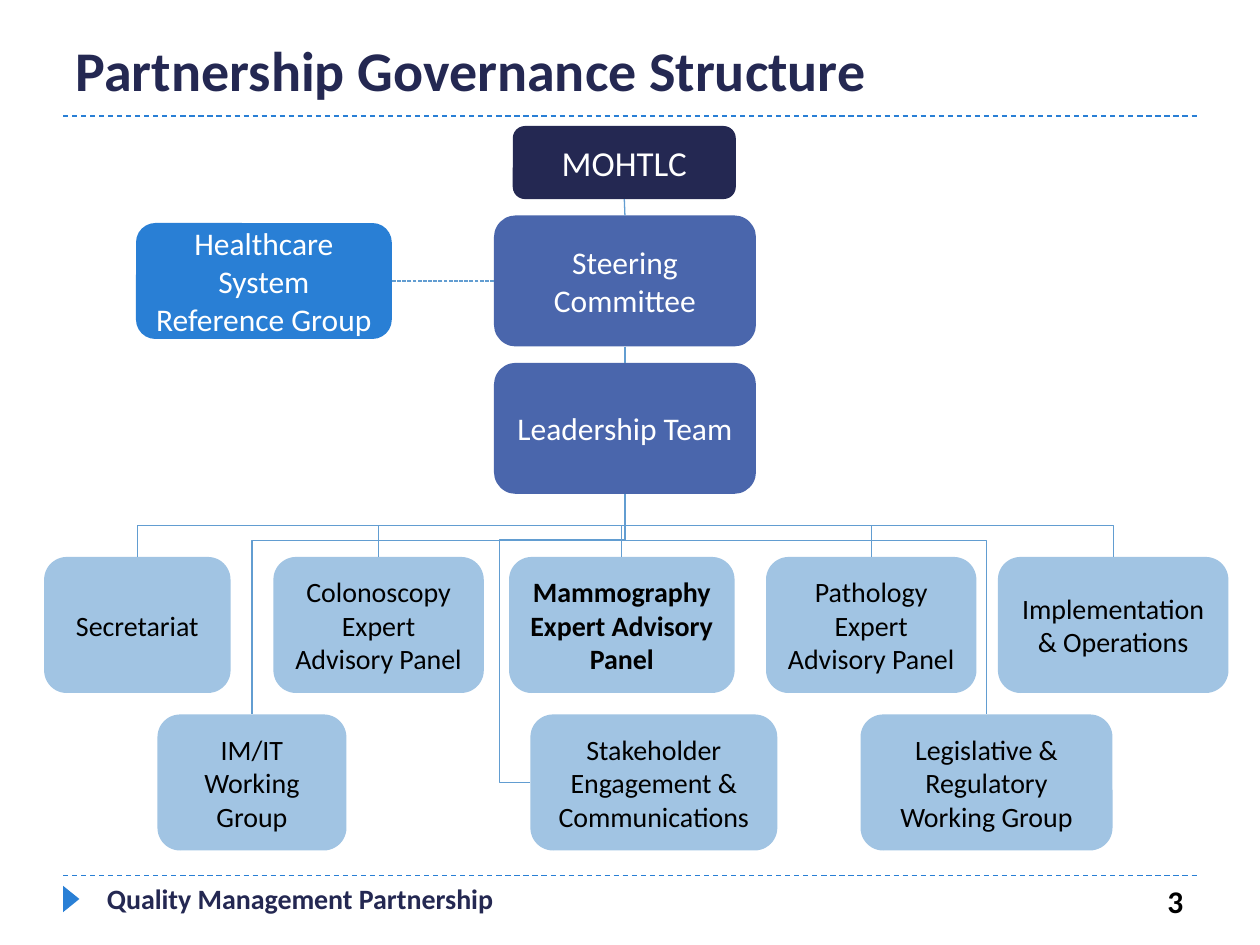
"""Build the partnership governance structure slide."""
from lxml.etree import SubElement
from pptx import Presentation
from pptx.dml.color import RGBColor
from pptx.enum.dml import MSO_LINE
from pptx.enum.shapes import MSO_CONNECTOR, MSO_SHAPE
from pptx.enum.text import MSO_ANCHOR, PP_ALIGN
from pptx.oxml.ns import qn
from pptx.util import Inches, Pt

NAVY = RGBColor(0x24, 0x28, 0x52)
INDIGO = RGBColor(0x4A, 0x66, 0xAC)
BLUE = RGBColor(0x29, 0x7F, 0xD5)
PALE_BLUE = RGBColor(0xA1, 0xC4, 0xE3)
LINK_BLUE = RGBColor(0x62, 0x9D, 0xD1)
WHITE = RGBColor(0xFF, 0xFF, 0xFF)
BLACK = RGBColor(0, 0, 0)

TOP, LEFT, BOTTOM, RIGHT = range(4)
PANEL_TOP, GROUP_TOP, TEAM_HEIGHT = 4.42, 5.67, 1.08
PANELS = [
    ("Secretariat", 0.35, 1.48),
    ("Colonoscopy Expert Advisory Panel", 2.17, 1.67),
    ("Mammography Expert Advisory Panel", 4.04, 1.79),
    ("Pathology Expert Advisory Panel", 6.08, 1.67),
    ("Implementation & Operations", 7.92, 1.83),
]
HIGHLIGHTED = "Mammography Expert Advisory Panel"
GROUPS = [
    ("IM/IT\nWorking Group", 1.25, 1.5),
    ("Legislative & Regulatory Working Group", 6.83, 2),
]


def write(frame, text, size, color, bold=False, align=PP_ALIGN.LEFT, anchor=MSO_ANCHOR.MIDDLE):
    """Fill a text frame with evenly formatted paragraphs."""
    frame.text = text
    frame.word_wrap = True
    frame.vertical_anchor = anchor
    for paragraph in frame.paragraphs:
        paragraph.alignment = align
        font = paragraph.font
        font.name, font.size, font.bold = "Calibri", Pt(size), bold
        font.color.rgb = color


def add_solid(slide, preset, left, top, width, height, fill):
    """Add a flat filled shape without an outline."""
    solid = slide.shapes.add_shape(
        preset, Inches(left), Inches(top), Inches(width), Inches(height))
    solid.shadow.inherit = False
    solid.fill.solid()
    solid.fill.fore_color.rgb = fill
    solid.line.fill.background()
    return solid


def add_body(slide, text, left, top, width, height, fill, color=WHITE, size=18, bold=False):
    """Add the rounded box of one governance body."""
    body = add_solid(slide, MSO_SHAPE.ROUNDED_RECTANGLE, left, top, width, height, fill)
    write(body.text_frame, text, size, color, bold, PP_ALIGN.CENTER)
    return body


def add_team(slide, text, left, top, width):
    """Add a pale box for a panel or working group."""
    return add_body(slide, text, left, top, width, TEAM_HEIGHT, PALE_BLUE, BLACK, 16,
                    text == HIGHLIGHTED)


def add_label(slide, text, left, top, width, height, **style):
    """Add a bold footer text box."""
    label = slide.shapes.add_textbox(
        Inches(left), Inches(top), Inches(width), Inches(height))
    write(label.text_frame, text, bold=True, **style)


def style_line(line, color, dash=None):
    """Give a connector a thin flat stroke."""
    line.line.color.rgb = color
    line.line.width = Pt(0.75)
    if dash:
        line.line.dash_style = dash
    SubElement(line._element.spPr, qn("a:effectLst"))


def add_rule(slide, y):
    """Add a dashed rule across the slide."""
    rule = slide.shapes.add_connector(
        MSO_CONNECTOR.STRAIGHT, Inches(0.5), Inches(y), Inches(9.5), Inches(y))
    style_line(rule, BLUE, MSO_LINE.DASH)


def link(slide, start, start_site, end, end_site, kind=MSO_CONNECTOR.STRAIGHT, dash=None):
    """Connect two bodies at the given sites."""
    connector = slide.shapes.add_connector(kind, 0, 0, 0, 0)
    connector.begin_connect(start, start_site)
    connector.end_connect(end, end_site)
    style_line(connector, LINK_BLUE, dash)
    return connector


def branch(slide, parent, child, *bends, site=TOP, preset="bentConnector3"):
    """Drop an elbow from the parent's foot, bending at fractions of its box."""
    elbow = link(slide, parent, BOTTOM, child, site, MSO_CONNECTOR.ELBOW)
    across = elbow.end_x - elbow.begin_x
    down = elbow.end_y - elbow.begin_y
    middle_x = (elbow.begin_x + elbow.end_x) // 2
    middle_y = (elbow.begin_y + elbow.end_y) // 2
    elbow.width, elbow.height = down, abs(across)
    elbow.left, elbow.top = middle_x - down // 2, middle_y - abs(across) // 2

    properties = elbow._element.spPr
    frame = properties.find(qn("a:xfrm"))
    frame.set("rot", "16200000" if across > 0 else "5400000")
    frame.set("flipH", "1" if across > 0 else "0")
    frame.set("flipV", "0")
    geometry = properties.find(qn("a:prstGeom"))
    geometry.set("prst", preset)
    guides = geometry.find(qn("a:avLst"))
    for number, bend in enumerate(bends, 1):
        SubElement(guides, qn("a:gd"), name=f"adj{number}", fmla=f"val {round(bend * 100000)}")


def add_frame(slide):
    """Add the title, rules and footer."""
    title = slide.shapes.title
    title.left, title.top = Inches(0.5), Inches(0.17)
    title.width, title.height = Inches(9), Inches(0.75)
    write(title.text_frame, "Partnership Governance Structure", 32, NAVY, True)
    for y in (0.92, 6.95):
        add_rule(slide, y)
    marker = add_solid(slide, MSO_SHAPE.ISOSCELES_TRIANGLE, 0.46, 7.07, 0.21, 0.13, BLUE)
    marker.rotation = 90
    add_label(slide, "Quality Management Partnership", 0.75, 6.95, 8.08, 0.4,
              size=16, color=NAVY, anchor=MSO_ANCHOR.TOP)
    add_label(slide, "3", 8.93, 6.95, 0.56, 0.4,
              size=18, color=BLACK, align=PP_ALIGN.RIGHT)


def add_structure(slide):
    """Add the governance bodies and the links between them."""
    ministry = add_body(slide, "MOHTLC", 4.07, 1, 1.77, 0.58, NAVY, size=20)
    steering = add_body(slide, "Steering Committee", 3.92, 1.71, 2.08, 1.04, INDIGO)
    leadership = add_body(slide, "Leadership Team", 3.92, 2.88, 2.08, 1.04, INDIGO)
    reference = add_body(slide, "Healthcare System Reference Group",
                         1.08, 1.77, 2.03, 0.92, BLUE)
    link(slide, ministry, BOTTOM, steering, TOP)
    link(slide, steering, BOTTOM, leadership, TOP)
    link(slide, steering, LEFT, reference, RIGHT, dash=MSO_LINE.SQUARE_DOT)

    for text, left, width in PANELS:
        branch(slide, leadership, add_team(slide, text, left, PANEL_TOP, width), 0.5)
    for text, left, width in GROUPS:
        branch(slide, leadership, add_team(slide, text, left, GROUP_TOP, width), 0.21)
    stakeholders = add_team(slide, "Stakeholder Engagement & Communications",
                            4.21, GROUP_TOP, 1.96)
    branch(slide, leadership, stakeholders, 0.16, 1.33, site=LEFT, preset="bentConnector4")


def main():
    """Create and save the slide."""
    deck = Presentation()
    deck.slide_width, deck.slide_height = Inches(10), Inches(7.5)
    slide = deck.slides.add_slide(deck.slide_layouts[5])
    add_frame(slide)
    add_structure(slide)
    deck.save("out.pptx")


if __name__ == "__main__":
    main()
